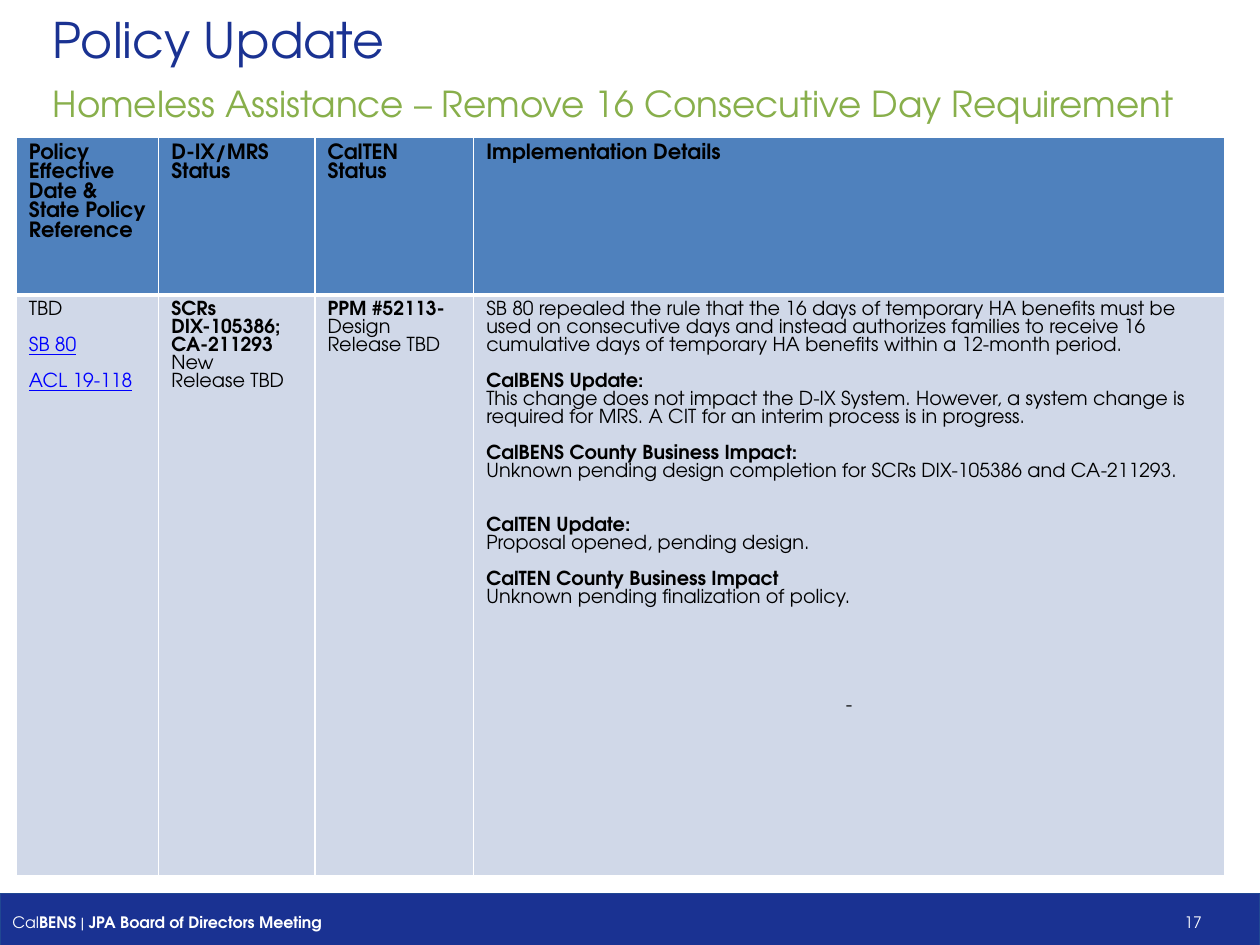
from lxml import etree
from pptx import Presentation
from pptx.dml.color import RGBColor
from pptx.enum.shapes import MSO_SHAPE
from pptx.enum.text import MSO_ANCHOR, PP_ALIGN
from pptx.oxml.ns import qn
from pptx.util import Inches, Pt

FONT = "TeX Gyre Adventor"
COLORS = {
    "navy": "1A3292", "footer_line": "204792", "green": "88AF4B",
    "header": "4F81BD", "body": "D0D8E8", "link": "0000FF",
    "black": "000000", "white": "FFFFFF",
}
BLANK_LINE = 10.3
COLUMN_WIDTHS = [1.13, 1.24, 1.26, 5.96]
ROW_HEIGHTS = [1.25, 4.61]
HEADERS = [
    "Policy Effective Date & State Policy Reference",
    "D-IX/MRS Status", "CalTEN Status", "Implementation Details",
]
# Each entry: text, style, blank lines before it
DETAILS = [
    [("TBD", "plain", 0), ("SB 80", "link", 1), ("ACL 19-118", "link", 1)],
    [("SCRs DIX-105386; CA-211293", "bold", 0), ("New", "plain", 0),
     ("Release TBD", "plain", 0)],
    [("PPM #52113-", "bold", 0), ("Design", "plain", 0),
     ("Release TBD", "plain", 0)],
    [("SB 80 repealed the rule that the 16 days of temporary HA benefits must be "
      "used on consecutive days and instead authorizes families to receive 16 "
      "cumulative days of temporary HA benefits within a 12-month period.", "plain", 0),
     ("CalBENS Update:", "bold", 1),
     ("This change does not impact the D-IX System. However, a system change is "
      "required for MRS. A CIT for an interim process is in progress.", "plain", 0),
     ("CalBENS County Business Impact:", "bold", 1),
     ("Unknown pending design completion for SCRs DIX-105386 and CA-211293.", "plain", 0),
     ("CalTEN Update:", "bold", 2),
     ("Proposal opened, pending design.", "plain", 0),
     ("CalTEN County Business Impact", "bold", 1),
     ("Unknown pending finalization of policy.", "plain", 0),
     ("-", "center", 5)],
]


def color(name):
    return RGBColor.from_string(COLORS[name])


def format_run(run, size, color_name, bold=False, underline=False):
    font = run.font
    font.name, font.size = FONT, Pt(size)
    font.bold, font.underline = bold, underline
    font.color.rgb = color(color_name)


def add_heading(slide, text, top, height, size, color_name, anchor):
    shape = slide.shapes.add_textbox(Inches(0.32), Inches(top), Inches(9.42), Inches(height))
    text_frame = shape.text_frame
    text_frame.word_wrap = True
    text_frame.vertical_anchor = anchor
    text_frame.text = text
    format_run(text_frame.paragraphs[0].runs[0], size, color_name)
    return text_frame.paragraphs[0]


def add_footer(slide):
    shape = slide.shapes.add_shape(
        MSO_SHAPE.RECTANGLE, 0, Inches(7.09), Inches(10), Inches(0.45))
    shape.shadow.inherit = False
    shape.fill.solid()
    shape.fill.fore_color.rgb = color("navy")
    shape.line.color.rgb = color("footer_line")
    shape.line.width = Pt(0.75)
    shape.text_frame.vertical_anchor = MSO_ANCHOR.MIDDLE
    paragraph = shape.text_frame.paragraphs[0]
    paragraph.alignment = PP_ALIGN.LEFT
    tabs = etree.SubElement(paragraph._p.get_or_add_pPr(), qn("a:tabLst"))
    for position, alignment in [(4.69, "l"), (9.44, "r")]:
        etree.SubElement(tabs, qn("a:tab"), pos=str(Inches(position)), algn=alignment)
    for text, bold in [("Cal", False), ("BENS", True), (" | ", False),
                       ("JPA Board of Directors Meeting\t\t", True), ("17", False)]:
        run = paragraph.add_run()
        run.text = text
        format_run(run, 9, "white", bold)


def style_cell(cell, fill_name, bottom_width):
    properties = cell._tc.get_or_add_tcPr()
    for side in ("L", "R", "T", "B"):
        width = bottom_width if side == "B" else 1
        line = etree.SubElement(properties, qn(f"a:ln{side}"), w=str(Pt(width)))
        fill = etree.SubElement(line, qn("a:solidFill"))
        etree.SubElement(fill, qn("a:srgbClr"), val=COLORS["white"])
    cell.fill.solid()
    cell.fill.fore_color.rgb = color(fill_name)


def write_cell(cell, entries, size):
    cell.text_frame.text = "\n".join(text for text, _, _ in entries)
    for paragraph, (_, style, blank_lines) in zip(cell.text_frame.paragraphs, entries):
        if blank_lines:
            paragraph.space_before = Pt(blank_lines * BLANK_LINE)
        if style == "center":
            paragraph.alignment = PP_ALIGN.CENTER
        is_link = style == "link"
        format_run(paragraph.runs[0], size, "link" if is_link else "black",
                   style == "bold", is_link)


def add_policy_table(slide):
    table = slide.shapes.add_table(
        2, 4, Inches(0.13), Inches(1.09),
        Inches(sum(COLUMN_WIDTHS)), Inches(sum(ROW_HEIGHTS))).table
    for row, height in zip(table.rows, ROW_HEIGHTS):
        row.height = Inches(height)
    for index, width in enumerate(COLUMN_WIDTHS):
        table.columns[index].width = Inches(width)
        header, details = table.cell(0, index), table.cell(1, index)
        style_cell(header, "header", 3)
        write_cell(header, [(HEADERS[index], "bold", 0)], 12)
        style_cell(details, "body", 1)
        write_cell(details, DETAILS[index], 11)


def main():
    presentation = Presentation()
    presentation.slide_width, presentation.slide_height = Inches(10), Inches(7.5)
    slide = presentation.slides.add_slide(presentation.slide_layouts[6])
    add_footer(slide)
    add_heading(slide, "Policy Update", 0.01, 0.59, 28, "navy", MSO_ANCHOR.MIDDLE)
    subtitle = add_heading(
        slide, "Homeless Assistance – Remove 16 Consecutive Day Requirement",
        0.6, 0.56, 20.4, "green", MSO_ANCHOR.TOP)
    subtitle.space_before = Pt(4)
    add_policy_table(slide)
    presentation.save("out.pptx")


if __name__ == "__main__":
    main()
